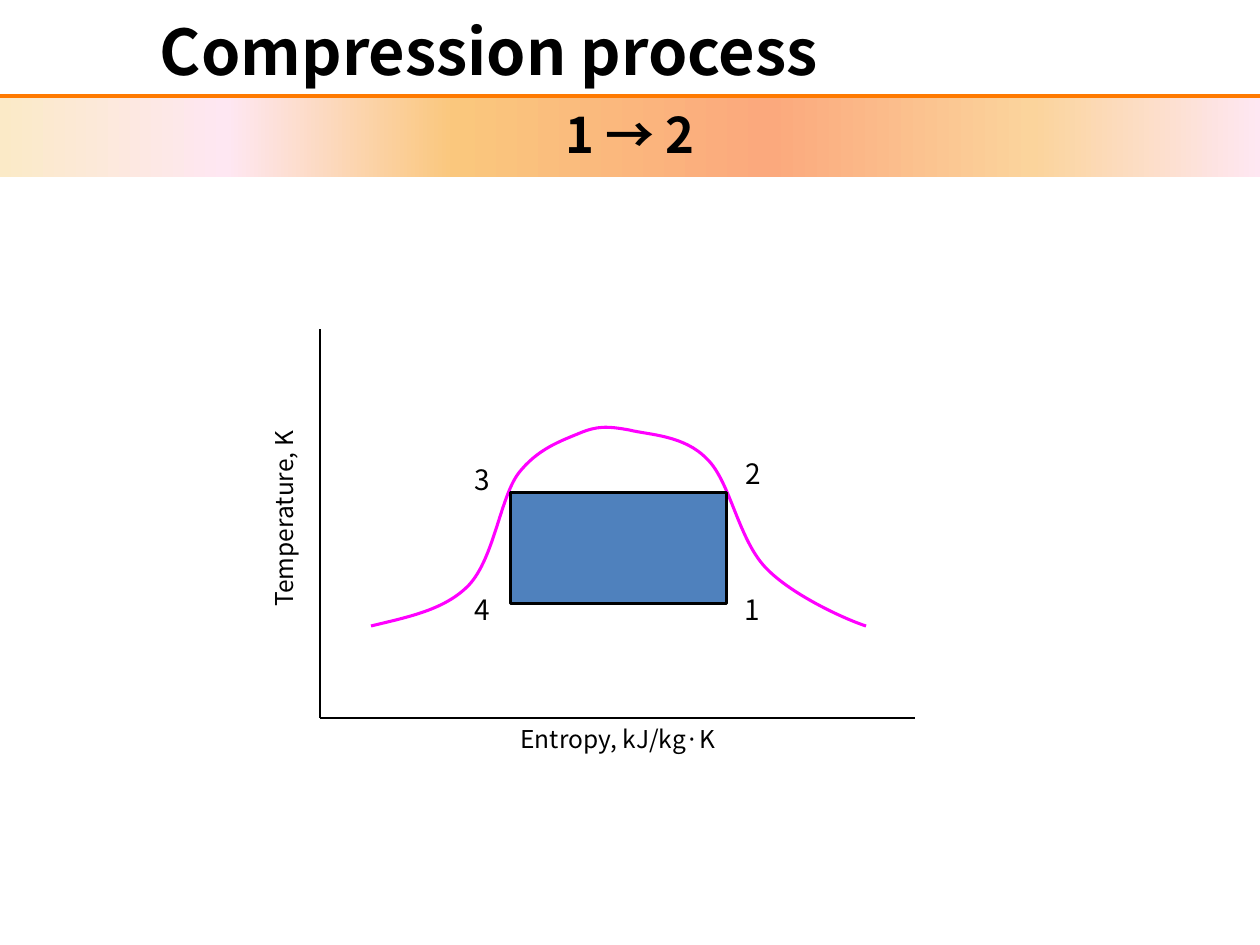
"""Build the compression process slide with its temperature-entropy chart."""
import dataclasses

import lxml.etree
import pptx
import pptx.dml.color
import pptx.enum.shapes
import pptx.enum.text
import pptx.oxml
import pptx.oxml.ns
import pptx.util

qn = pptx.oxml.ns.qn
Align = pptx.enum.text.PP_ALIGN
Anchor = pptx.enum.text.MSO_ANCHOR
Fit = pptx.enum.text.MSO_AUTO_SIZE
Kind = pptx.enum.shapes.MSO_SHAPE
SCALE = 914400 / 126


@dataclasses.dataclass(frozen=True)
class Theme:
    font: str = "Noto Sans CJK KR"
    ink: str = "000000"
    rule: str = "FF7A00"
    curve: str = "FF00FF"
    block: str = "4F81BD"
    band: tuple = ((0, "FBEAC7"), (18, "FEE7F2"), (36, "FAC77D"),
                   (61, "FBA97D"), (82, "FBD49C"), (100, "FEE7F2"))
    title: int = 36
    head: int = 28
    state: int = 16
    axis: int = 14


def emu(px):
    return round(px * SCALE)


def rgb(code):
    return pptx.dml.color.RGBColor.from_string(code)


def apply(item, values):
    for name, value in values.items():
        setattr(item, name, value)


class Deck:
    def __init__(self, theme):
        self.theme = theme
        self.file = pptx.Presentation()
        apply(self.file, {"slide_width": emu(1260), "slide_height": emu(945)})
        self.slide = self.file.slides.add_slide(self.file.slide_layouts[6])
        self.shapes = self.slide.shapes

    def stroke(self, item, color, width):
        item.line.color.rgb = rgb(color)
        item.line.width = pptx.util.Pt(width)

    def line(self, start, end, color, width):
        link = self.shapes.add_connector(
            pptx.enum.shapes.MSO_CONNECTOR.STRAIGHT, *map(emu, start + end))
        self.stroke(link, color, width)
        lxml.etree.SubElement(link._element.spPr, qn("a:effectLst"))

    def letter(self, item, words, size, bold=False, align=Align.LEFT, **frame):
        apply(item.text_frame, {"word_wrap": True, **frame})
        para = item.text_frame.paragraphs[0]
        para.alignment = align
        run = para.add_run()
        run.text = words
        apply(run.font, {"name": self.theme.font, "size": pptx.util.Pt(size), "bold": bold})
        run.font.color.rgb = rgb(self.theme.ink)
        fonts = run._r.get_or_add_rPr()
        for tag in ("a:ea", "a:cs"):
            lxml.etree.SubElement(fonts, qn(tag), typeface=self.theme.font)

    def text(self, box, words, size, **form):
        item = self.shapes.add_textbox(*map(emu, box))
        self.letter(item, words, size, **form)
        return item

    def label(self, box, words, size):
        return self.text(box, words, size, auto_size=Fit.SHAPE_TO_FIT_TEXT)

    def rise(self, box, words, size):
        item = self.label(box, words, size)
        item.rotation = 180
        item.text_frame._txBody.bodyPr.set("vert", "eaVert")

    def rect(self, box):
        item = self.shapes.add_shape(Kind.RECTANGLE, *map(emu, box))
        item.shadow.inherit = False
        return item

    def block(self, box, color, width):
        item = self.rect(box)
        item.fill.solid()
        item.fill.fore_color.rgb = rgb(color)
        self.stroke(item, self.theme.ink, width)

    def band(self, box, stops, words, size):
        item = self.rect(box)
        item.line.fill.background()
        item.fill.gradient()
        item.fill.gradient_angle = 0
        steps = item._element.spPr.find(".//" + qn("a:gsLst"))
        steps.clear()
        for place, color in stops:
            stop = lxml.etree.SubElement(steps, qn("a:gs"), pos=str(place * 1000))
            lxml.etree.SubElement(stop, qn("a:srgbClr"), val=color)
        self.letter(item, words, size, bold=True, align=Align.CENTER,
                    vertical_anchor=Anchor.TOP)

    def curve(self, points, color, width):
        pen = self.shapes.build_freeform(*points[0], scale=SCALE)
        pen.add_line_segments(points[1:], close=False)
        item = pen.convert_to_shape()
        item.shadow.inherit = False
        item.fill.background()
        self.stroke(item, color, width)
        route = item._element.spPr.find(".//" + qn("a:path"))
        legs = route.findall(qn("a:lnTo"))
        for first in range(0, len(legs), 3):
            bend = lxml.etree.SubElement(route, qn("a:cubicBezTo"))
            for leg in legs[first:first + 3]:
                bend.append(leg[0])
                route.remove(leg)


def main():
    theme = Theme()
    deck = Deck(theme)
    deck.line((0, 96), (1260, 96), theme.rule, 2)

    base = (320, 718)
    for end in ((320, 329), (915, 718)):
        deck.line(base, end, theme.ink, 0.75)
    deck.rise((263, 391, 54, 228), "Temperature, K", theme.axis)
    deck.label((508, 718, 261, 43), "Entropy, kJ/kg·K", theme.axis)

    deck.curve([(371, 626),
                (408, 617), (445, 610), (469, 585),
                (494, 558), (500, 499), (518, 474),
                (537, 449), (561, 441), (580, 433),
                (597, 426), (607, 426), (629, 430),
                (649, 435), (684, 435), (707, 459),
                (730, 481), (738, 538), (765, 567),
                (791, 595), (847, 620), (866, 626)], theme.curve, 1.75)
    deck.block((511, 493, 216, 111), theme.block, 1.75)
    for words, left, top, width in (("1", 732, 586, 37), ("4", 462, 586, 37),
                                    ("3", 462, 456, 37), ("2", 733, 450, 45)):
        deck.label((left, top, width, 47), words, theme.state)

    deck.text((0, 0, 978, 100), "Compression process", theme.title, bold=True,
              align=Align.CENTER, vertical_anchor=Anchor.MIDDLE)
    deck.band((0, 98, 1260, 79), theme.band, "1 → 2", theme.head)
    deck.file.save("out.pptx")


if __name__ == "__main__":
    main()
